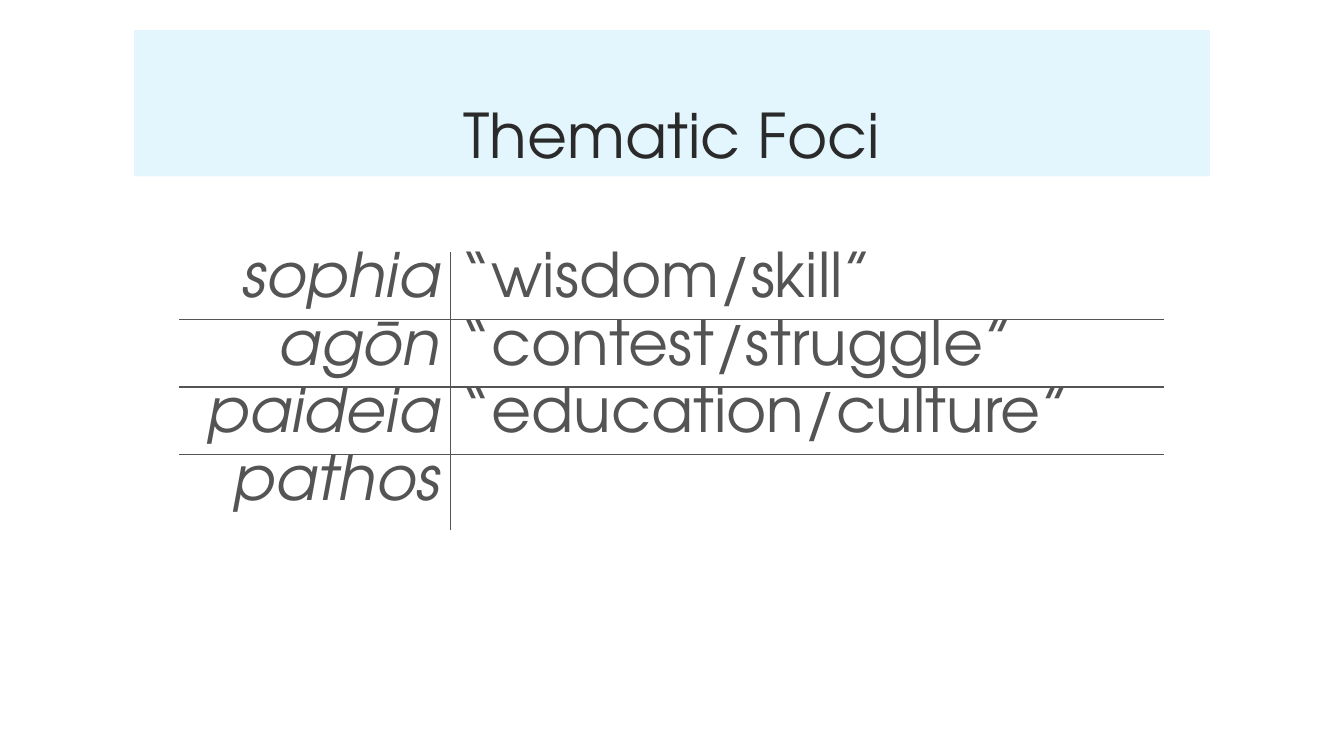
from pptx import Presentation
from pptx.dml.color import RGBColor as RGB
from pptx.enum.shapes import MSO_SHAPE as Shape
from pptx.enum.text import MSO_ANCHOR as Anchor, PP_ALIGN as Align
from pptx.oxml.ns import qn
from pptx.util import Inches, Pt
from lxml.etree import SubElement as sub

FONT = "TeX Gyre Adventor"
SKY = RGB(0x00, 0xB0, 0xF0)
INK = RGB(0x2A, 0x2A, 0x2A)
GRAY = RGB(0x54, 0x54, 0x54)
TERMS = [
    ("sophia", "“wisdom/skill”"),
    ("agōn", "“contest/struggle”"),
    ("paideia", "“education/culture”"),
    ("pathos", ""),
]


def write(frame, text, color=GRAY, size=44, align=Align.LEFT, italic=False, space=1.0):
    """Fill a text frame with one formatted paragraph."""
    para = frame.paragraphs[0]
    para.alignment = align
    para.line_spacing = space
    if not text:
        para.font.size = Pt(size)
        return
    run = para.add_run()
    run.text = text
    font = run.font
    font.name, font.size, font.italic = FONT, Pt(size), italic
    font.color.rgb = color


def rule(cell, sides):
    """Draw thin borders on the named sides of a cell and hide the others."""
    props = cell._tc.get_or_add_tcPr()
    for index, side in enumerate("LRTB"):
        line = sub(props, qn(f"a:ln{side}"), w=str(Pt(1)))
        if side in sides:
            fill = sub(line, qn("a:solidFill"))
            sub(fill, qn("a:srgbClr"), val=str(GRAY))
        else:
            sub(line, qn("a:noFill"))
        props.insert(index, line)


def banner(slide, left, top, width, height, text):
    """Place the tinted title band with its text at the bottom."""
    band = slide.shapes.add_shape(
        Shape.RECTANGLE, Inches(left), Inches(top), Inches(width), Inches(height))
    band.shadow.inherit = False
    band.line.fill.background()
    band.fill.solid()
    band.fill.fore_color.rgb = SKY
    tint = band.fill._xPr.find(qn("a:solidFill"))[0]
    sub(tint, qn("a:alpha"), val="11000")
    frame = band.text_frame
    frame.word_wrap = True
    frame.vertical_anchor = Anchor.BOTTOM
    write(frame, text, color=INK, align=Align.CENTER, space=0.9)


def grid(slide, left, top, width, height, terms, split=2.69):
    """Place the table of terms and meanings with inner rules only."""
    table = slide.shapes.add_table(
        len(terms), 2, Inches(left), Inches(top), Inches(width), Inches(height)).table
    table.first_row = table.horz_banding = False
    for column, size in zip(table.columns, (split, width - split)):
        column.width = Inches(size)
    for row, pair in enumerate(terms):
        table.rows[row].height = Inches(height / len(terms))
        for col, text in enumerate(pair):
            cell = table.cell(row, col)
            cell.margin_top = cell.margin_bottom = 0
            cell.fill.background()
            sides = "L" if col else "R"
            sides += "T" if row else ""
            sides += "B" if row < len(terms) - 1 else ""
            rule(cell, sides)
            write(cell.text_frame, text, italic=col == 0,
                  align=Align.LEFT if col else Align.RIGHT)


def main():
    """Build the slide and save it."""
    deck = Presentation()
    deck.slide_width, deck.slide_height = Inches(13.33), Inches(7.5)
    slide = deck.slides.add_slide(deck.slide_layouts[6])
    banner(slide, 1.33, 0.3, 10.67, 1.45, "Thematic Foci")
    grid(slide, 1.78, 2.5, 9.77, 2.68, TERMS)
    deck.save("out.pptx")


if __name__ == "__main__":
    main()
